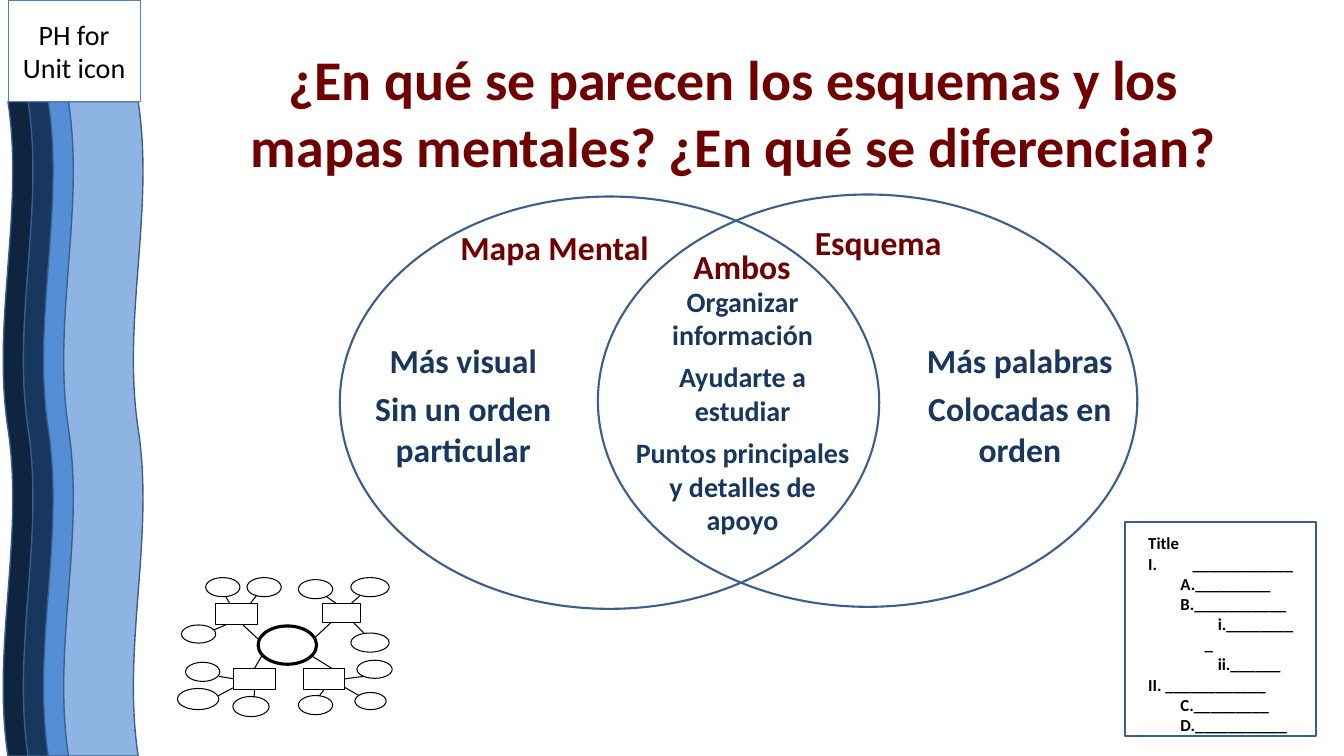
from lxml import etree
from pptx import Presentation
from pptx import util as u
from pptx.dml.color import RGBColor
from pptx.enum import shapes, text
from pptx.oxml import ns

PX = 9144
FONT = "Calibri"
NAVY, MAROON, BLUE, BLACK, WHITE = "17375E", "700000", "3A5F8C", "000000", "FFFFFF"
KIND = shapes.MSO_SHAPE
CENTER = text.PP_ALIGN.CENTER


def px(*values):
    return [u.Emu(value * PX) for value in values]


def color(hex_value):
    return RGBColor.from_string(hex_value)


def add_outline(page, kind, box, line, weight, fill=None):
    shape = page.shapes.add_shape(kind, *px(*box))
    shape.shadow.inherit = False
    if fill:
        shape.fill.solid()
        shape.fill.fore_color.rgb = color(fill)
    else:
        shape.fill.background()
    shape.line.color.rgb = color(line)
    shape.line.width = u.Pt(weight)
    return shape


def style_paragraph(para, size, hex_value, bold=True, align=CENTER, after=0):
    para.alignment = align
    para.space_before = u.Pt(0)
    para.space_after = u.Pt(after)
    para.font.name = FONT
    para.font.size = u.Pt(size)
    para.font.bold = bold
    para.font.color.rgb = color(hex_value)


def add_text(page, box, lines, size, hex_value, after=0):
    frame = page.shapes.add_textbox(*px(*box)).text_frame
    frame.word_wrap = True
    frame.auto_size = text.MSO_AUTO_SIZE.SHAPE_TO_FIT_TEXT
    frame.text = "\n".join(lines)
    for para in frame.paragraphs:
        style_paragraph(para, size, hex_value, after=after)
    return frame


def add_sidebar(page, box):
    left, top, width, height = box
    band, step, icon_height = 79, 20, 101
    length = height - icon_height
    middle = top + icon_height + length // 2
    for index, fill in enumerate(["0F243E", NAVY, "558ED5", "8EB4E3"]):
        center = left + 42 + index * step
        wave = add_outline(page, KIND.DOUBLE_WAVE,
                           (center - length // 2, middle - band // 2, length, band),
                           BLUE, 1, fill)
        wave.rotation = 270
    icon = add_outline(page, KIND.RECTANGLE, (left + 8, top, width - 8, icon_height),
                       "4F81BD", 0.75)
    frame = icon.text_frame
    frame.word_wrap = True
    frame.vertical_anchor = text.MSO_ANCHOR.MIDDLE
    frame.text = "PH for Unit icon"
    style_paragraph(frame.paragraphs[0], 20, BLACK, bold=False)


def add_title(page, box):
    title = page.shapes.title
    title.left, title.top, title.width, title.height = px(*box)
    frame = title.text_frame
    frame.word_wrap = True
    frame.auto_size = text.MSO_AUTO_SIZE.NONE
    frame.vertical_anchor = text.MSO_ANCHOR.TOP
    frame.text = "¿En qué se parecen los esquemas y los mapas mentales? ¿En qué se diferencian?"
    style_paragraph(frame.paragraphs[0], 40, MAROON, after=12)


def add_outline_card(page, box):
    left, top, width, height = box
    add_outline(page, KIND.RECTANGLE, box, BLUE, 1.5)
    levels = {
        "section": (0, 44, -44, "romanUcPeriod"),
        "point": (1, 38, -6, "alphaUcPeriod"),
        "detail": (2, 56, 13, "romanLcPeriod"),
    }
    entries = [
        ("Title", None),
        ("_" * 12, "section"),
        ("_" * 9, "point"),
        ("_" * 11, "point"),
        ("_" * 9, "detail"),
        ("_" * 6, "detail"),
        ("II. " + "_" * 12, None),
        ("_" * 9, "point"),
        ("_" * 11, "point"),
    ]
    frame = add_text(page, (left + 13, top + 6, width - 23, height - 20),
                     [words for words, _ in entries], 12, BLACK)
    for para, (_, level) in zip(frame.paragraphs, entries):
        para.alignment = text.PP_ALIGN.LEFT
        if level:
            depth, margin, indent, numbering = levels[level]
            para.level = depth
            properties = para._p.get_or_add_pPr()
            properties.set("marL", str(margin * PX))
            properties.set("indent", str(indent * PX))
            bullet = etree.Element(ns.qn("a:buAutoNum"), type=numbering)
            properties.find(ns.qn("a:defRPr")).addprevious(bullet)


def add_mind_map(page, box):
    left, top, _, _ = box
    ideas = [
        (120, 117, 34, 19), (178, 82, 35, 18), (176, 114, 31, 17), (8, 84, 34, 19),
        (0, 110, 41, 21), (55, 118, 36, 20), (172, 55, 38, 19), (172, 0, 38, 19),
        (120, 2, 34, 19), (69, 0, 34, 19), (28, 0, 34, 19), (4, 47, 34, 18),
    ]
    topics = {
        "upper left": (38, 26, 41, 21),
        "upper right": (144, 26, 38, 19),
        "lower left": (56, 90, 41, 21),
        "lower right": (125, 90, 41, 21),
    }
    links = [
        (72, 26, 79, 17), (158, 26, 148, 19), (172, 26, 182, 17), (50, 46, 36, 52),
        (56, 109, 39, 118), (132, 77, 153, 90), (166, 109, 180, 117),
        (137, 59, 153, 44), (80, 61, 65, 47), (52, 26, 48, 19), (175, 45, 185, 55),
    ]
    joined_links = [
        ("lower left", 0, 84, 77), ("lower left", 1, 41, 98), ("lower left", 2, 76, 119),
        ("lower right", 2, 141, 117), ("lower right", 3, 185, 98),
    ]

    def add_node(kind, node, weight=0.75):
        x, y, width, height = node
        return add_outline(page, kind, (left + x, top + y, width, height),
                           BLACK, weight, WHITE)

    def add_link(x1, y1, x2, y2):
        link = page.shapes.add_connector(
            shapes.MSO_CONNECTOR.STRAIGHT,
            *px(left + x1, top + y1, left + x2, top + y2))
        link.line.color.rgb = color(BLACK)
        link.line.width = u.Pt(0.75)
        etree.SubElement(link._element.spPr, ns.qn("a:effectLst"))
        return link

    for ends in links:
        add_link(*ends)
    add_node(KIND.OVAL, (80, 48, 58, 38), 2.25)
    for idea in ideas:
        add_node(KIND.OVAL, idea)
    topic_shapes = {name: add_node(KIND.RECTANGLE, node) for name, node in topics.items()}
    for name, side, x, y in joined_links:
        add_link(x, y, x, y).begin_connect(topic_shapes[name], side)


def add_venn(page, box):
    left, top, width, height = box
    for x, y in [(0, 2), (width - 535, 0)]:
        add_outline(page, KIND.OVAL, (left + x, top + y, 535, height - 2), BLUE, 1.5)
    headings = [
        ("Mapa Mental", 105, 27, 216),
        ("Esquema", 439, 22, 190),
        ("Ambos", 304, 46, 190),
    ]
    for words, x, y, span in headings:
        add_text(page, (left + x, top + y, span, 50), [words], 24, MAROON)
    traits = [
        (["Organizar información", "Ayudarte a estudiar",
          "Puntos principales y detalles de apoyo"], 282, 84, 235, 263, 20),
        (["Más visual", "Sin un orden particular"], -6, 139, 257, 140, 24),
        (["Más palabras", "Colocadas en orden"], 561, 139, 227, 140, 24),
    ]
    for lines, x, y, span, tall, size in traits:
        add_text(page, (left + x, top + y, span, tall), lines, size, NAVY, after=6)


def main():
    deck = Presentation()
    deck.slide_width, deck.slide_height = px(1333, 750)
    page = deck.slides.add_slide(deck.slide_layouts[5])
    page.background.fill.solid()
    page.background.fill.fore_color.rgb = color(WHITE)
    add_sidebar(page, (0, 0, 139, 750))
    add_title(page, (229, 39, 997, 229))
    add_outline_card(page, (1116, 518, 189, 212))
    add_mind_map(page, (176, 573, 213, 138))
    add_venn(page, (337, 193, 791, 411))
    deck.save("out.pptx")


if __name__ == "__main__":
    main()
